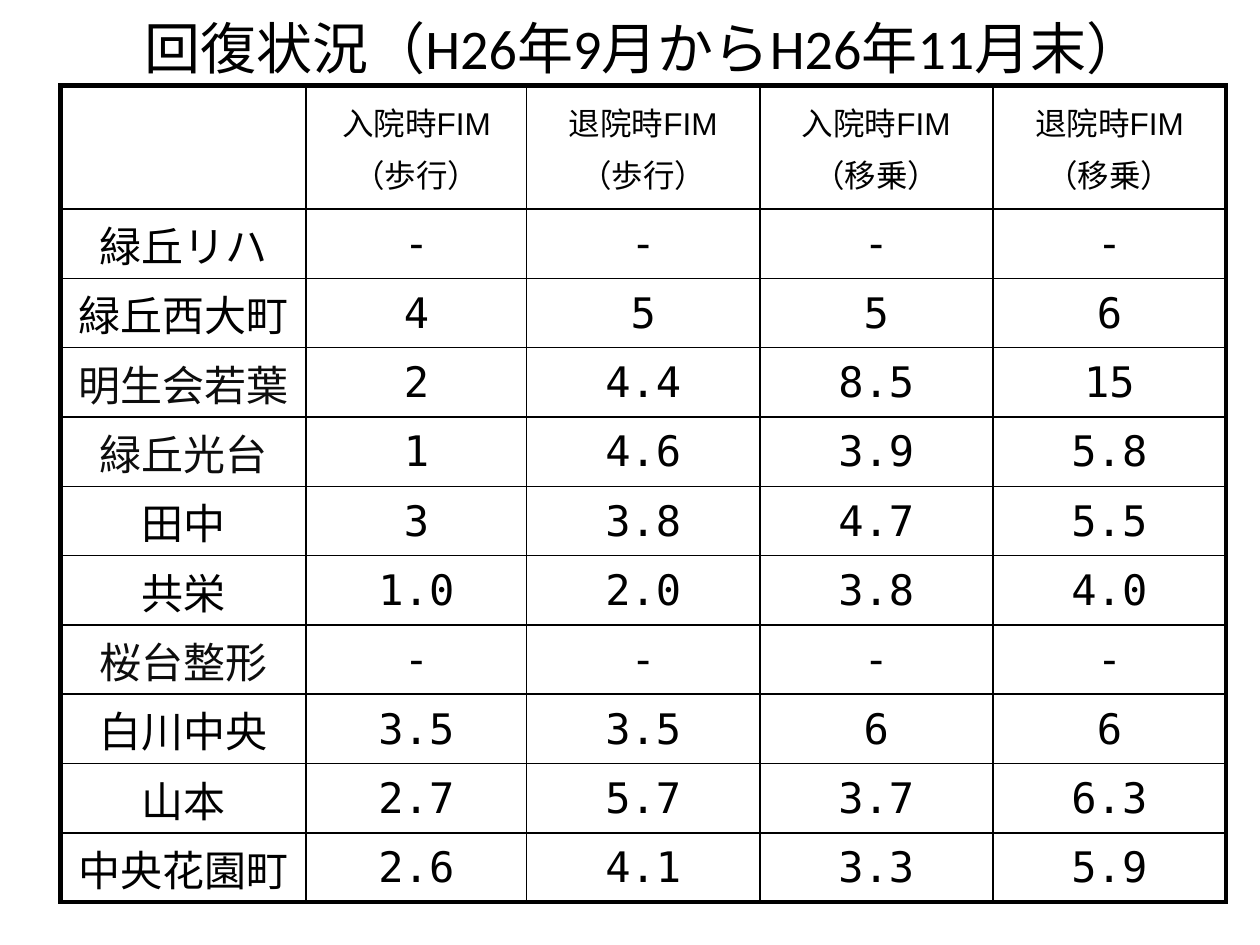
import pptx
import pptx.dml.color
import pptx.enum.text
import pptx.oxml.ns
import pptx.util
from lxml import etree
from pptx.util import Inches

BLACK = "000000"
SOFT_BLACK = "0D0D0D"
CJK_FONT = "Noto Sans CJK JP"
NUMBER_FONT = "DejaVu Sans Mono"

COLUMN_WIDTHS = [1.95, 1.75, 1.85, 1.85, 1.85]
HEADER_HEIGHT = 0.98
ROW_HEIGHT = 0.55
HEADERS = [
    ["入院時FIM", "（歩行）"],
    ["退院時FIM", "（歩行）"],
    ["入院時FIM", "（移乗）"],
    ["退院時FIM", "（移乗）"],
]
# Hospital, name font, name colour, then the four FIM scores
HOSPITALS = [
    ("緑丘リハ", CJK_FONT, BLACK, "-", "-", "-", "-"),
    ("緑丘西大町", CJK_FONT, BLACK, "4", "5", "5", "6"),
    ("明生会若葉", "Arial", SOFT_BLACK, "2", "4.4", "8.5", "15"),
    ("緑丘光台", "Arial", SOFT_BLACK, "1", "4.6", "3.9", "5.8"),
    ("田中", CJK_FONT, BLACK, "3", "3.8", "4.7", "5.5"),
    ("共栄", CJK_FONT, BLACK, "1.0", "2.0", "3.8", "4.0"),
    ("桜台整形", "Arial", SOFT_BLACK, "-", "-", "-", "-"),
    ("白川中央", CJK_FONT, BLACK, "3.5", "3.5", "6", "6"),
    ("山本", CJK_FONT, BLACK, "2.7", "5.7", "3.7", "6.3"),
    ("中央花園町", "Arial", BLACK, "2.6", "4.1", "3.3", "5.9"),
]


def color(hex_text):
    return pptx.dml.color.RGBColor.from_string(hex_text)


def write_lines(frame, lines, size, font_name, hex_text=BLACK, space_before=0):
    """Write centred paragraphs that share one font."""
    for index, line in enumerate(lines):
        para = frame.paragraphs[0] if index == 0 else frame.add_paragraph()
        para.text = line
        para.alignment = pptx.enum.text.PP_ALIGN.CENTER
        para.space_before = pptx.util.Pt(space_before)
        para.font.size = pptx.util.Pt(size)
        para.font.name = font_name
        para.font.color.rgb = color(hex_text)
        # East Asian glyphs take their own typeface
        east_asian = etree.SubElement(para.font._element, pptx.oxml.ns.qn("a:ea"))
        east_asian.set("typeface", CJK_FONT)


def set_borders(cell, widths):
    """Draw the left, right, top and bottom borders, in points."""
    properties = cell._tc.get_or_add_tcPr()
    for side, width in zip("LRTB", widths):
        line = etree.SubElement(properties, pptx.oxml.ns.qn(f"a:ln{side}"))
        line.set("w", str(pptx.util.Pt(width)))
        fill = etree.SubElement(line, pptx.oxml.ns.qn("a:solidFill"))
        etree.SubElement(fill, pptx.oxml.ns.qn("a:srgbClr")).set("val", BLACK)


def add_title(page, left, top, width, height):
    box = page.shapes.add_textbox(left, top, width, height)
    box.text_frame.word_wrap = True
    write_lines(box.text_frame, ["回復状況（H26年9月からH26年11月末）"], 32, "Calibri")


def add_body_cell(cell, text, font_name, hex_text=BLACK):
    cell.margin_left = cell.margin_right = cell.margin_top = Inches(0.01)
    cell.margin_bottom = 0
    write_lines(cell.text_frame, [text], 24, font_name, hex_text)


def add_recovery_table(page, left, top, width, height):
    row_count, column_count = len(HOSPITALS) + 1, len(COLUMN_WIDTHS)
    table = page.shapes.add_table(row_count, column_count, left, top, width, height).table
    table.first_row = table.horz_banding = False
    for column, column_width in zip(table.columns, COLUMN_WIDTHS):
        column.width = Inches(column_width)
    for index, row in enumerate(table.rows):
        row.height = Inches(ROW_HEIGHT if index else HEADER_HEIGHT)

    # Thin grid inside a heavy outer frame
    for r in range(row_count):
        for c in range(column_count):
            cell = table.cell(r, c)
            outer = (c == 0, c == column_count - 1, r == 0, r == row_count - 1)
            set_borders(cell, [3 if edge else 1 for edge in outer])
            cell.fill.background()
            cell.vertical_anchor = pptx.enum.text.MSO_ANCHOR.MIDDLE

    # Header row
    for c, lines in enumerate(HEADERS, start=1):
        write_lines(table.cell(0, c).text_frame, lines, 18, "Arial", space_before=3.6)

    # Hospital rows
    for r, (name, name_font, name_color, *scores) in enumerate(HOSPITALS, start=1):
        add_body_cell(table.cell(r, 0), name, name_font, name_color)
        for c, score in enumerate(scores, start=1):
            add_body_cell(table.cell(r, c), score, NUMBER_FONT)


def main():
    deck = pptx.Presentation()
    deck.slide_width, deck.slide_height = Inches(10), Inches(7.5)
    page = deck.slides.add_slide(deck.slide_layouts[6])
    add_title(page, Inches(0.61), Inches(0.06), Inches(9), Inches(1.25))
    table_height = HEADER_HEIGHT + ROW_HEIGHT * len(HOSPITALS)
    add_recovery_table(page, Inches(0.48), Inches(0.68),
                       Inches(sum(COLUMN_WIDTHS)), Inches(table_height))
    deck.save("out.pptx")


if __name__ == "__main__":
    main()
